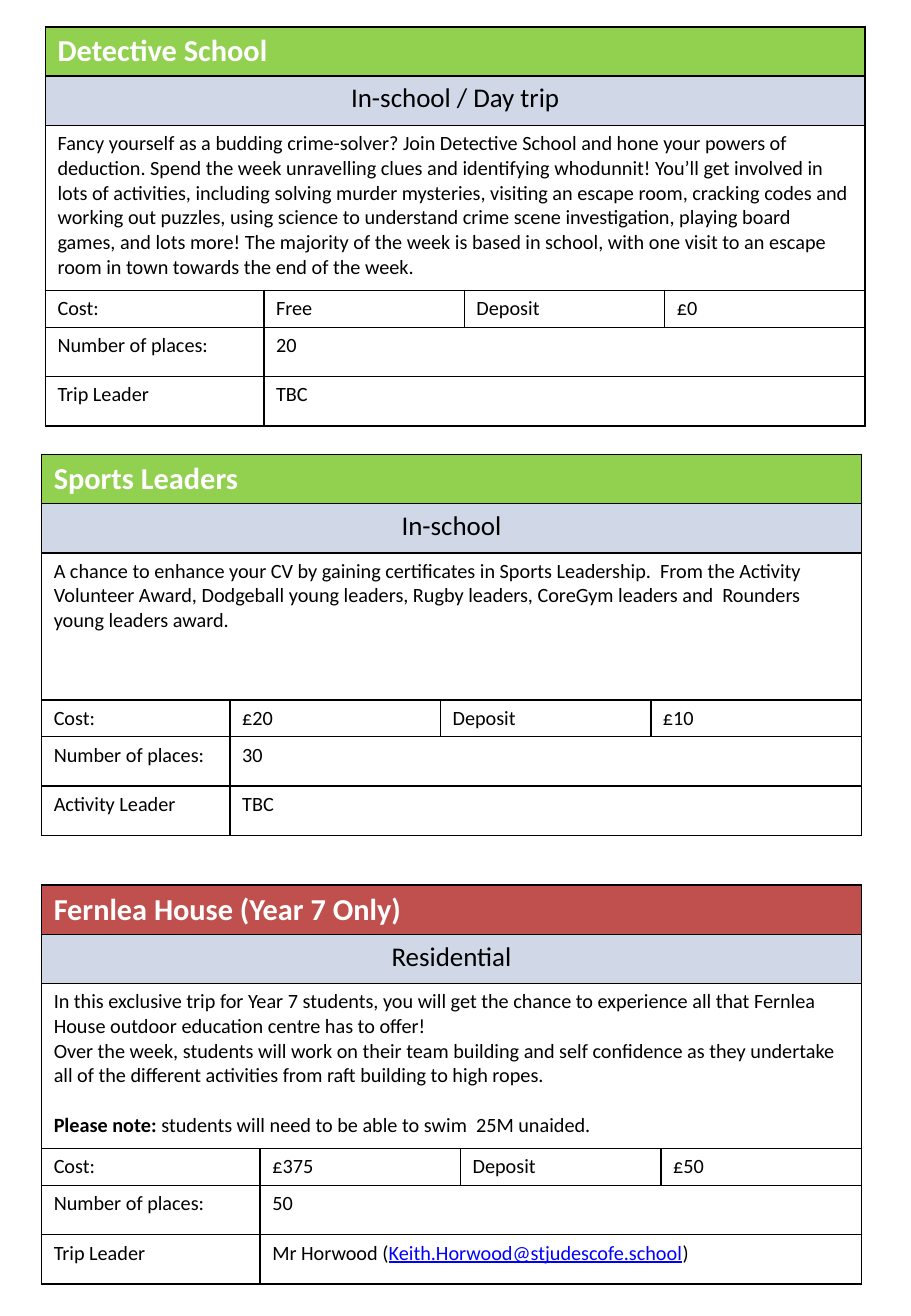
from dataclasses import dataclass

from lxml.etree import SubElement
from pptx import Presentation
from pptx.dml.color import RGBColor
from pptx.enum.text import PP_ALIGN as Align
from pptx.oxml.ns import qn
from pptx.util import Cm, Pt

COLOURS = {
    "green": "92D050",
    "red": "C0504D",
    "band": "D0D8E8",
    "white": "FFFFFF",
    "black": "000000",
    "link": "0000FF",
}
FONT = "Calibri"
TABLE_WIDTH = 17.14
ROW_HEIGHT = 1.03
COST_HEIGHT = 0.77
COLUMN_COUNT = 4


@dataclass(frozen=True)
class Span:
    """A stretch of text with its own emphasis."""

    text: str
    bold: bool = False
    underline: bool = False
    colour: str = "black"


@dataclass(frozen=True)
class Trip:
    """One activity and the place of its table, in centimetres."""

    name: str
    kind: str
    colour: str
    description: list[list[Span]]
    cost: str
    deposit: str
    places: str
    leader_label: str
    leader: list[Span]
    left: float
    top: float
    label_width: float
    description_height: float


TRIPS = [
    Trip(
        "Detective School", "In-school / Day trip", "green",
        [[Span(
            "Fancy yourself as a budding crime-solver? Join Detective School and hone "
            "your powers of deduction. Spend the week unravelling clues and identifying "
            "whodunnit! You’ll get involved in lots of activities, including solving "
            "murder mysteries, visiting an escape room, cracking codes and working out "
            "puzzles, using science to understand crime scene investigation, playing "
            "board games, and lots more! The majority of the week is based in school, "
            "with one visit to an escape room in town towards the end of the week."
        )]],
        "Free", "£0", "20", "Trip Leader", [Span("TBC")],
        left=0.95, top=0.56, label_width=4.57, description_height=3.45,
    ),
    Trip(
        "Sports Leaders", "In-school", "green",
        [[Span(
            "A chance to enhance your CV by gaining certificates in Sports Leadership.  "
            "From the Activity Volunteer Award, Dodgeball young leaders, Rugby leaders, "
            "CoreGym leaders and  Rounders young leaders award."
        )]],
        "£20", "£10", "30", "Activity Leader", [Span("TBC")],
        left=0.87, top=9.5, label_width=3.94, description_height=3.07,
    ),
    Trip(
        "Fernlea House (Year 7 Only)", "Residential", "red",
        [
            [Span(
                "In this exclusive trip for Year 7 students, you will get the chance to "
                "experience all that Fernlea House outdoor education centre has to offer!"
            )],
            [Span(
                "Over the week, students will work on their team building and self "
                "confidence as they undertake all of the different activities from raft "
                "building to high ropes."
            )],
            [
                Span("Please note: ", bold=True),
                Span("students will need to be able to swim  25M unaided."),
            ],
        ],
        "£375", "£50", "50", "Trip Leader",
        [
            Span("Mr Horwood ("),
            Span("Keith.Horwood@stjudescofe.school", underline=True, colour="link"),
            Span(")"),
        ],
        left=0.87, top=18.5, label_width=4.57, description_height=3.45,
    ),
]


def rgb(name: str) -> RGBColor:
    """Look up a colour by name."""
    return RGBColor.from_string(COLOURS[name])


def write_text(paragraph, spans: list[Span], *, size=12, align=Align.LEFT, before=0) -> None:
    """Write formatted spans into a paragraph."""
    paragraph.alignment = align
    paragraph.space_before = Pt(before)
    for span in spans:
        run = paragraph.add_run()
        run.text = span.text
        font = run.font
        font.name, font.size = FONT, Pt(size)
        font.bold, font.underline = span.bold, span.underline
        font.color.rgb = rgb(span.colour)


def style_cell(cell, fill: str | None) -> None:
    """Give a cell black borders and a plain or empty fill."""
    properties = cell._tc.get_or_add_tcPr()
    for side in ("a:lnL", "a:lnR", "a:lnT", "a:lnB"):
        line = SubElement(properties, qn(side), w=str(Pt(1)))
        solid = SubElement(line, qn("a:solidFill"))
        SubElement(solid, qn("a:srgbClr"), val=COLOURS["black"])
    if fill:
        cell.fill.solid()
        cell.fill.fore_color.rgb = rgb(fill)
    else:
        cell.fill.background()


def add_trip(slide, trip: Trip) -> None:
    """Draw the table of one trip."""
    heights = [ROW_HEIGHT, ROW_HEIGHT, trip.description_height,
               COST_HEIGHT, ROW_HEIGHT, ROW_HEIGHT]
    value_width = (TABLE_WIDTH - trip.label_width) / (COLUMN_COUNT - 1)
    widths = [trip.label_width] + [value_width] * (COLUMN_COUNT - 1)
    table = slide.shapes.add_table(
        len(heights), COLUMN_COUNT, Cm(trip.left), Cm(trip.top),
        Cm(TABLE_WIDTH), Cm(sum(heights))).table
    table.first_row = table.horz_banding = False
    for column, width in zip(table.columns, widths):
        column.width = Cm(width)

    fills = [trip.colour, "band", None, None, None, None]
    for row, height, fill in zip(table.rows, heights, fills):
        row.height = Cm(height)
        for cell in row.cells:
            style_cell(cell, fill)
    for row, first in ((0, 0), (1, 0), (2, 0), (4, 1), (5, 1)):
        table.cell(row, first).merge(table.cell(row, COLUMN_COUNT - 1))

    def first_paragraph(row: int, column: int):
        """Return the opening paragraph of a cell."""
        return table.cell(row, column).text_frame.paragraphs[0]

    write_text(first_paragraph(0, 0), [Span(trip.name, bold=True, colour="white")], size=18)
    write_text(first_paragraph(1, 0), [Span(trip.kind)], size=16, align=Align.CENTER)
    frame = table.cell(2, 0).text_frame
    for index, spans in enumerate(trip.description):
        paragraph = frame.add_paragraph() if index else frame.paragraphs[0]
        write_text(paragraph, spans, before=14.6 if spans[0].bold else 0)

    details = [
        [[Span(text)] for text in ("Cost:", trip.cost, "Deposit", trip.deposit)],
        [[Span("Number of places:")], [Span(trip.places)]],
        [[Span(trip.leader_label)], trip.leader],
    ]
    for row, cells in enumerate(details, start=3):
        for column, spans in enumerate(cells):
            write_text(first_paragraph(row, column), spans)


def main() -> None:
    """Build the slide and save it."""
    presentation = Presentation()
    presentation.slide_width, presentation.slide_height = Cm(19.05), Cm(27.51)
    slide = presentation.slides.add_slide(presentation.slide_layouts[6])
    for trip in TRIPS:
        add_trip(slide, trip)
    presentation.save("out.pptx")


if __name__ == "__main__":
    main()
